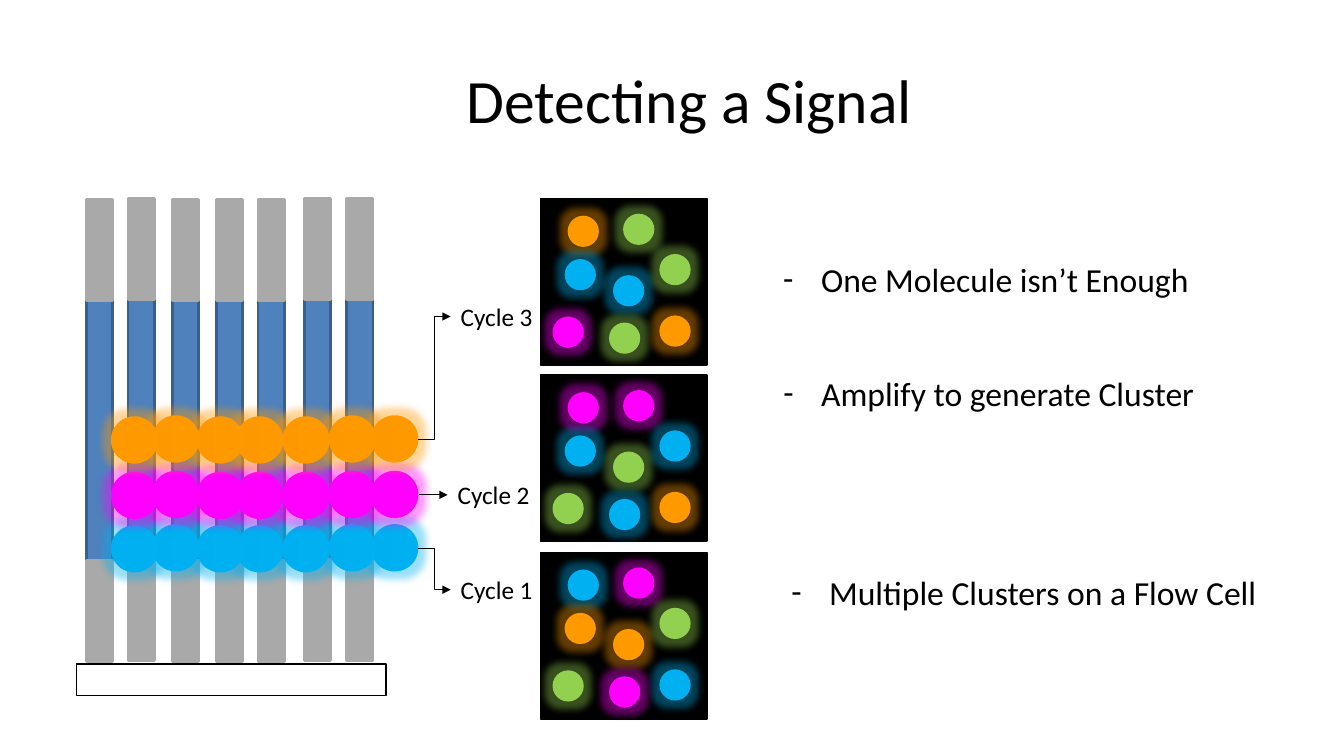
import lxml.etree
import pptx
import pptx.dml.color
import pptx.enum.shapes
import pptx.enum.text
import pptx.oxml.ns
import pptx.util

RGBColor = pptx.dml.color.RGBColor
BLACK = RGBColor(0x00, 0x00, 0x00)
WHITE = RGBColor(0xFF, 0xFF, 0xFF)
GRAY = RGBColor(0xA9, 0xA9, 0xA9)
STRAND_BLUE = RGBColor(0x4F, 0x81, 0xBD)
STRAND_EDGE = RGBColor(0x3A, 0x5F, 0x8C)
CYAN = RGBColor(0x00, 0xB0, 0xF0)
MAGENTA = RGBColor(0xFF, 0x00, 0xFF)
ORANGE = RGBColor(0xFF, 0x99, 0x00)
GREEN = RGBColor(0x92, 0xD0, 0x50)

PX = 9144
FONT = "Calibri"
RECTANGLE = pptx.enum.shapes.MSO_SHAPE.RECTANGLE
OVAL = pptx.enum.shapes.MSO_SHAPE.OVAL

TITLE = ("Detecting a Signal", (84, 36, 1200, 125))
BULLETS = [
    ("One Molecule isn’t Enough", (767, 252, 426, 50)),
    ("Amplify to generate Cluster", (767, 365, 431, 50)),
    ("Multiple Clusters on a Flow Cell", (775, 562, 486, 50)),
]
CYCLES = [
    ("Cycle 1", (447, 565, 92, 40), (415, 544), (447, 585)),
    ("Cycle 2", (444, 471, 92, 40), (416, 491), (444, 491)),
    ("Cycle 3", (447, 294, 92, 40), (415, 436), (447, 314)),
]

STRANDS = [
    (357, 368, 0), (315, 326, 0), (269, 280, 1), (228, 234, 1),
    (184, 195, 1), (140, 151, 0), (99, 110, 1),
]
STRAND_WIDTH = 26
STRAND_PARTS = [
    (426, 258, STRAND_BLUE, STRAND_EDGE),
    (605, 100, GRAY, GRAY),
    (247, 100, GRAY, GRAY),
]
BASE_SIZE = 47
FIRST_BASE_ROW = (520, CYAN)
LATER_BASE_ROWS = [(467, MAGENTA), (412, ORANGE)]
SURFACE = (76, 659, 307, 31)

PANEL_LEFT, PANEL_SIZE, CLUSTER_SIZE = 536, 165, 31
CLUSTER_OFFSETS = [
    (27, 17), (118, 116), (82, 15), (72, 76),
    (118, 55), (12, 117), (24, 60), (68, 123),
]
PANELS = [
    (548, [CYAN, CYAN, MAGENTA, ORANGE, GREEN, GREEN, ORANGE, MAGENTA]),
    (372, [MAGENTA, ORANGE, MAGENTA, GREEN, CYAN, GREEN, CYAN, CYAN]),
    (197, [ORANGE, ORANGE, GREEN, CYAN, GREEN, MAGENTA, CYAN, GREEN]),
]
GLOW_RADIUS = 15
GLOW_ALPHA = 40000


def emu(lengths):
    return [pptx.util.Emu(round(length * PX)) for length in lengths]


def add_child(parent, tag, **attributes):
    child = lxml.etree.SubElement(parent, pptx.oxml.ns.qn(tag))
    for name, value in attributes.items():
        child.set(name, str(value))
    return child


def add_figure(slide, kind, box, fill, line=None, width=1.25):
    shape = slide.shapes.add_shape(kind, *emu(box))
    shape.shadow.inherit = False
    shape.fill.solid()
    shape.fill.fore_color.rgb = fill
    if line is None:
        shape.line.fill.background()
    else:
        shape.line.color.rgb = line
        shape.line.width = pptx.util.Pt(width)
    return shape


def add_glowing_spot(slide, left, top, size, color):
    shape = add_figure(slide, OVAL, (left, top, size, size), color)
    effects = shape._element.spPr.find(pptx.oxml.ns.qn("a:effectLst"))
    glow = add_child(effects, "a:glow", rad=GLOW_RADIUS * PX)
    tint = add_child(glow, "a:srgbClr", val=color)
    add_child(tint, "a:alpha", val=GLOW_ALPHA)


def add_text(slide, text, box, size):
    frame = slide.shapes.add_textbox(*emu(box)).text_frame
    frame.word_wrap = False
    frame.auto_size = pptx.enum.text.MSO_AUTO_SIZE.SHAPE_TO_FIT_TEXT
    paragraph = frame.paragraphs[0]
    run = paragraph.add_run()
    run.text = text
    run.font.name = FONT
    run.font.size = pptx.util.Pt(size)
    run.font.color.rgb = BLACK
    return frame, paragraph


def add_title(slide):
    frame, paragraph = add_text(slide, *TITLE, 44)
    frame.word_wrap = True
    frame.auto_size = pptx.enum.text.MSO_AUTO_SIZE.NONE
    frame.vertical_anchor = pptx.enum.text.MSO_ANCHOR.MIDDLE
    paragraph.alignment = pptx.enum.text.PP_ALIGN.CENTER


def add_bullet(slide, text, box):
    paragraph = add_text(slide, text, box, 24)[1]
    properties = paragraph._p.get_or_add_pPr()
    properties.set("marL", "342900")
    properties.set("indent", "-342900")
    add_child(properties, "a:buFont", typeface=FONT)
    add_child(properties, "a:buChar", char="-")


def add_strands(slide):
    row_top, row_color = FIRST_BASE_ROW
    for center, base_left, drop in STRANDS:
        for middle, length, fill, line in STRAND_PARTS:
            box = (center - length / 2, middle + drop - STRAND_WIDTH / 2,
                   length, STRAND_WIDTH)
            add_figure(slide, RECTANGLE, box, fill, line, 2).rotation = 270
        add_glowing_spot(slide, base_left, row_top + drop, BASE_SIZE, row_color)


def add_panel(slide, top, colors):
    box = (PANEL_LEFT, top, PANEL_SIZE, PANEL_SIZE)
    add_figure(slide, RECTANGLE, box, BLACK, BLACK)
    for (across, down), color in zip(CLUSTER_OFFSETS, colors):
        add_glowing_spot(slide, PANEL_LEFT + across, top + down, CLUSTER_SIZE, color)


def add_cycle(slide, label, box, start, end):
    add_text(slide, label, box, 18)
    connector = slide.shapes.add_connector(
        pptx.enum.shapes.MSO_CONNECTOR.ELBOW, *emu(start + end))
    connector.line.color.rgb = BLACK
    connector.line.width = pptx.util.Pt(0.75)
    add_child(connector.line._get_or_add_ln(), "a:tailEnd", type="triangle")
    add_child(connector._element.spPr, "a:effectLst")


def main():
    presentation = pptx.Presentation()
    presentation.slide_width, presentation.slide_height = emu((1333, 750))
    slide = presentation.slides.add_slide(presentation.slide_layouts[6])
    add_title(slide)
    for bullet in BULLETS:
        add_bullet(slide, *bullet)
    add_strands(slide)
    for panel in PANELS:
        add_panel(slide, *panel)
    for row_top, color in LATER_BASE_ROWS:
        for center, base_left, drop in STRANDS:
            add_glowing_spot(slide, base_left, row_top + drop, BASE_SIZE, color)
    for cycle in CYCLES:
        add_cycle(slide, *cycle)
    add_figure(slide, RECTANGLE, SURFACE, WHITE, BLACK)
    presentation.save("out.pptx")


if __name__ == "__main__":
    main()
